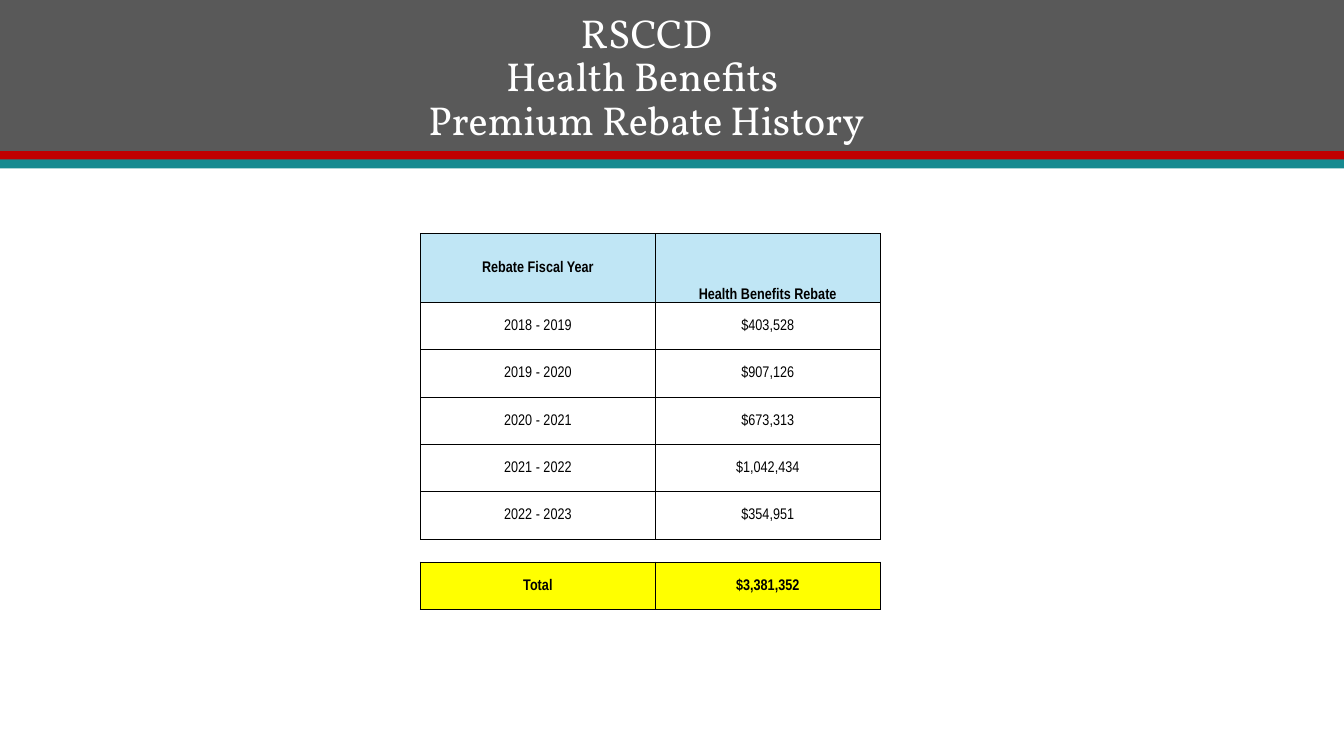
import dataclasses
import typing

import lxml.etree
import pptx
import pptx.dml.color
import pptx.enum.shapes
import pptx.enum.text
import pptx.oxml.ns
import pptx.util

Inches = pptx.util.Inches
Pt = pptx.util.Pt
RGBColor = pptx.dml.color.RGBColor
Anchor = pptx.enum.text.MSO_ANCHOR
qn = pptx.oxml.ns.qn

BLACK = RGBColor(0x00, 0x00, 0x00)
WHITE = RGBColor(0xFF, 0xFF, 0xFF)
GRAY = RGBColor(0x59, 0x59, 0x59)
RED = RGBColor(0xC0, 0x00, 0x00)
TEAL = RGBColor(0x16, 0x8A, 0x90)
PALE_BLUE = RGBColor(0xC0, 0xE6, 0xF5)
YELLOW = RGBColor(0xFF, 0xFF, 0x00)

TITLE_FONT = "Vollkorn"
TABLE_FONT = "Arial Narrow"
TABLE_SIZE = Pt(11)
THIN, THICK = 0.5, 1.0
SLIDE_WIDTH = 13.33


@dataclasses.dataclass(frozen=True)
class Band:
    top: float
    height: float
    color: RGBColor


@dataclasses.dataclass(frozen=True)
class Borders:
    """Line widths in points; a width of 0 means no line."""

    sides: float = THIN
    top: float = THIN
    bottom: float = THIN


@dataclasses.dataclass(frozen=True)
class RebateRow:
    texts: tuple[str, str]
    height: float = 0.47
    bold: bool = False
    fill: typing.Optional[RGBColor] = None
    borders: Borders = Borders()
    anchors: tuple[Anchor, Anchor] = (Anchor.MIDDLE, Anchor.MIDDLE)


BANDS = (
    Band(0, 1.5, GRAY),
    Band(1.5, 0.09, RED),
    Band(1.58, 0.09, TEAL),
)
TITLE_LINES = ("RSCCD", "Health Benefits ", "Premium Rebate History")
COLUMN_WIDTHS = (2.33, 2.23)
FRAMED = Borders(THICK, THICK, THICK)
ROWS = (
    RebateRow(("Rebate Fiscal Year", "Health Benefits Rebate"), 0.68, True,
              PALE_BLUE, FRAMED, (Anchor.MIDDLE, Anchor.BOTTOM)),
    RebateRow(("2018 - 2019", "$403,528"), borders=Borders(top=THICK)),
    RebateRow(("2019 - 2020", "$907,126")),
    RebateRow(("2020 - 2021", "$673,313")),
    RebateRow(("2021 - 2022", "$1,042,434")),
    RebateRow(("2022 - 2023", "$354,951")),
    RebateRow(("", ""), 0.23, borders=Borders(sides=0, bottom=THICK)),
    RebateRow(("Total", "$3,381,352"), bold=True, fill=YELLOW, borders=FRAMED),
)


def add_band(slide: typing.Any, band: Band) -> None:
    shape = slide.shapes.add_shape(
        pptx.enum.shapes.MSO_SHAPE.RECTANGLE,
        0, Inches(band.top), Inches(SLIDE_WIDTH), Inches(band.height),
    )
    shape.shadow.inherit = False
    shape.fill.solid()
    shape.fill.fore_color.rgb = band.color
    shape.line.fill.background()


def format_title(slide: typing.Any) -> None:
    title = slide.shapes.title
    title.left, title.top = Inches(1.16), Inches(0.64)
    title.width, title.height = Inches(10.5), Inches(0.79)
    slide.shapes._spTree.append(title._element)  # in front of the bands

    frame = title.text_frame
    frame.auto_size = pptx.enum.text.MSO_AUTO_SIZE.NONE
    frame.word_wrap = True
    frame.vertical_anchor = Anchor.BOTTOM
    frame.margin_bottom = 0
    paragraph = frame.paragraphs[0]
    paragraph.alignment = pptx.enum.text.PP_ALIGN.CENTER
    paragraph.line_spacing = 0.9
    for index, line in enumerate(TITLE_LINES):
        if index:
            paragraph.add_line_break()
        run = paragraph.add_run()
        run.text = line
        run.font.name = TITLE_FONT
        run.font.size = Pt(28.8)
        run.font.color.rgb = WHITE


def set_borders(cell: typing.Any, borders: Borders) -> None:
    properties = cell._tc.get_or_add_tcPr()
    widths = {"a:lnL": borders.sides, "a:lnR": borders.sides,
              "a:lnT": borders.top, "a:lnB": borders.bottom}
    for tag, width in widths.items():
        line = lxml.etree.SubElement(properties, qn(tag), w=str(Pt(width)))
        if width:
            fill = lxml.etree.SubElement(line, qn("a:solidFill"))
            lxml.etree.SubElement(fill, qn("a:srgbClr"), val=str(BLACK))
        else:
            lxml.etree.SubElement(line, qn("a:noFill"))


def format_cell(cell: typing.Any, text: str, row: RebateRow, anchor: Anchor) -> None:
    cell.margin_left = cell.margin_right = cell.margin_top = Inches(0.01)
    cell.margin_bottom = 0
    cell.vertical_anchor = anchor
    set_borders(cell, row.borders)
    if row.fill is None:
        cell.fill.background()
    else:
        cell.fill.solid()
        cell.fill.fore_color.rgb = row.fill

    paragraph = cell.text_frame.paragraphs[0]
    paragraph.alignment = pptx.enum.text.PP_ALIGN.CENTER
    if text:
        run = paragraph.add_run()
        run.text = text
        run.font.name = TABLE_FONT
        run.font.size = TABLE_SIZE
        run.font.bold = row.bold
        run.font.color.rgb = BLACK
    else:
        lxml.etree.SubElement(paragraph._p, qn("a:endParaRPr"),
                              sz=str(TABLE_SIZE.centipoints))


def add_rebate_table(slide: typing.Any) -> None:
    table = slide.shapes.add_table(
        len(ROWS), len(COLUMN_WIDTHS), Inches(4.17), Inches(2.32),
        Inches(sum(COLUMN_WIDTHS)), Inches(sum(row.height for row in ROWS)),
    ).table
    table.first_row = table.horz_banding = False
    for column, width in zip(table.columns, COLUMN_WIDTHS):
        column.width = Inches(width)
    for table_row, row in zip(table.rows, ROWS):
        table_row.height = Inches(row.height)
        for cell, text, anchor in zip(table_row.cells, row.texts, row.anchors):
            format_cell(cell, text, row, anchor)


def main() -> None:
    presentation = pptx.Presentation()
    presentation.slide_width = Inches(SLIDE_WIDTH)
    presentation.slide_height = Inches(7.5)
    slide = presentation.slides.add_slide(
        presentation.slide_layouts.get_by_name("Title Only"))
    for band in BANDS:
        add_band(slide, band)
    format_title(slide)
    add_rebate_table(slide)
    presentation.save("out.pptx")


if __name__ == "__main__":
    main()
